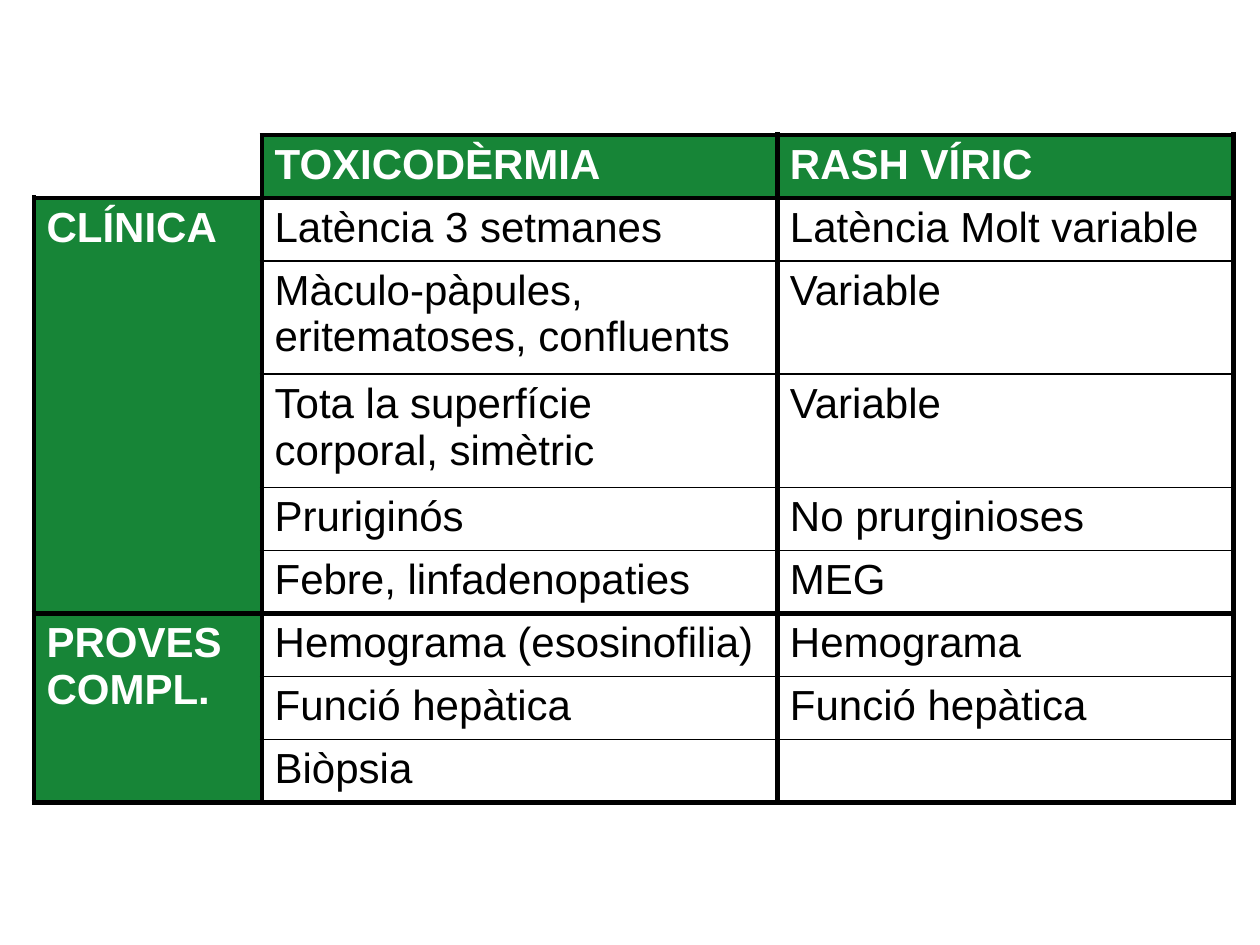
from pptx import Presentation
from pptx.dml.color import RGBColor
from pptx.enum import text
from pptx.oxml import ns, xmlchemy
from pptx.util import Inches, Pt

GREEN = RGBColor(0x17, 0x85, 0x37)
WHITE = RGBColor(0xFF, 0xFF, 0xFF)
BLACK = RGBColor(0, 0, 0)

THICK, THIN = 3, 1
HEADINGS = ["", "TOXICODÈRMIA", "RASH VÍRIC"]
SECTIONS = [
    ("CLÍNICA", [
        ("Latència 3 setmanes", "Latència Molt variable"),
        ("Màculo-pàpules, eritematoses, confluents", "Variable"),
        ("Tota la superfície corporal, simètric", "Variable"),
        ("Pruriginós", "No prurginioses"),
        ("Febre, linfadenopaties", "MEG"),
    ]),
    ("PROVES COMPL.", [
        ("Hemograma (esosinofilia)", "Hemograma"),
        ("Funció hepàtica", "Funció hepàtica"),
        ("Biòpsia", ""),
    ]),
]
COLUMN_WIDTHS = [1.81, 4.09, 3.62]
ROW_HEIGHTS = [0.5, 0.5, 0.9, 0.9] + [0.5] * 5


class ComparisonSlide:
    label_format = {"name": "Arial", "size": Pt(24), "bold": True}
    entry_format = {"name": "Arial", "size": Pt(24), "bold": False}

    def __init__(self, presentation):
        self.slide = presentation.slides.add_slide(presentation.slide_layouts[6])

    def table(self, left, top, widths, heights):
        frame = self.slide.shapes.add_table(
            len(heights), len(widths), Inches(left), Inches(top),
            Inches(sum(widths)), Inches(sum(heights)))
        grid = frame.table
        grid.first_row = grid.horz_banding = False
        for column, width in zip(grid.columns, widths):
            column.width = Inches(width)
        for row, height in zip(grid.rows, heights):
            row.height = Inches(height)
        return grid

    def borders(self, cell, left, right, top, bottom):
        properties = cell._tc.get_or_add_tcPr()
        sides = zip("LRTB", (left, right, top, bottom))
        for index, (side, (color, width)) in enumerate(sides):
            line = xmlchemy.OxmlElement(f"a:ln{side}")
            line.set("w", str(Pt(width)))
            fill = xmlchemy.OxmlElement("a:solidFill")
            shade = xmlchemy.OxmlElement("a:srgbClr")
            shade.set("val", str(color))
            fill.append(shade)
            line.append(fill)
            properties.insert(index, line)

    def cell(self, cell, words, fill, color, font_format):
        cell.fill.solid()
        cell.fill.fore_color.rgb = fill
        cell.vertical_anchor = text.MSO_ANCHOR.TOP
        paragraph = cell.text_frame.paragraphs[0]
        if words:
            paragraph.text = words
        for key, value in font_format.items():
            setattr(paragraph.font, key, value)
        paragraph.font.color.rgb = color
        for run in paragraph.runs:
            for key, value in font_format.items():
                setattr(run.font, key, value)
            run.font.color.rgb = color

    def label(self, cell, words):
        self.cell(cell, words, GREEN, WHITE, self.label_format)
        self.borders(cell, *[(BLACK, THICK)] * 4)

    def entry(self, cell, words, first, last):
        self.cell(cell, words, WHITE, BLACK, self.entry_format)
        thick = (BLACK, THICK)
        self.borders(cell, thick, thick,
                     (BLACK, THICK if first else THIN),
                     (BLACK, THICK if last else THIN))

    def corner(self, cell):
        self.cell(cell, "", WHITE, BLACK, self.entry_format)
        self.borders(cell, (WHITE, THIN), (BLACK, THICK),
                     (WHITE, THIN), (BLACK, THICK))


def main():
    presentation = Presentation()
    presentation.slide_width = Inches(10)
    presentation.slide_height = Inches(7.5)
    page = ComparisonSlide(presentation)
    comparison = page.table(0.27, 1.07, COLUMN_WIDTHS, ROW_HEIGHTS)

    page.corner(comparison.cell(0, 0))
    for column, heading in enumerate(HEADINGS[1:], 1):
        page.label(comparison.cell(0, column), heading)

    start = 1
    for section, findings in SECTIONS:
        end = start + len(findings) - 1
        comparison.cell(start, 0).merge(comparison.cell(end, 0))
        for row, finding in enumerate(findings, start):
            page.label(comparison.cell(row, 0), section if row == start else "")
            for column, words in enumerate(finding, 1):
                page.entry(comparison.cell(row, column), words,
                           row == start, row == end)
        start = end + 1

    presentation.save("out.pptx")


if __name__ == "__main__":
    main()
